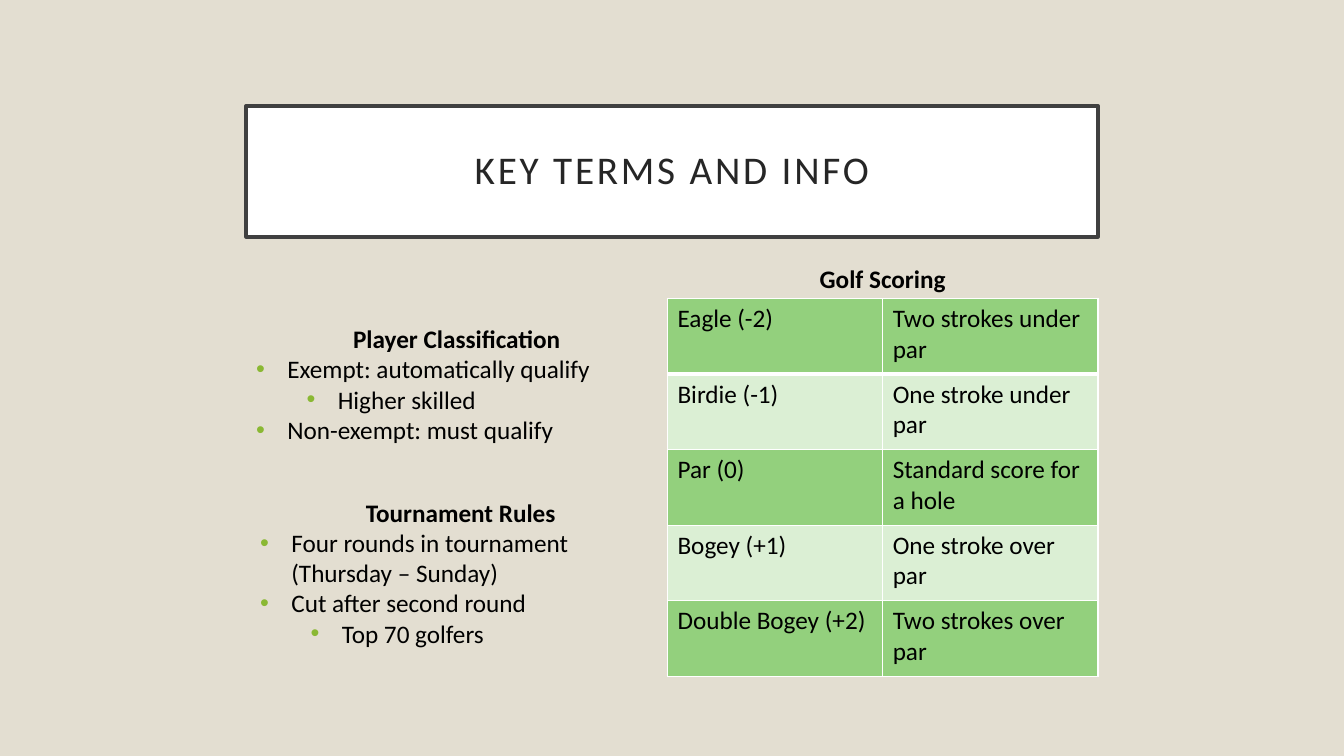
import pptx
import pptx.util
import pptx.dml.color
import pptx.enum.text
import pptx.oxml
import pptx.oxml.ns

Inches = pptx.util.Inches
Pt = pptx.util.Pt
ALIGN = pptx.enum.text.PP_ALIGN
ANCHOR = pptx.enum.text.MSO_ANCHOR
FIT = pptx.enum.text.MSO_AUTO_SIZE

BLACK, WHITE, GREEN = "000000", "FFFFFF", "8AB833"
BANDS = ("93D07D", "DBEFD4")

CLASSES = [
    (0, "Exempt: automatically qualify"),
    (1, "Higher skilled"),
    (0, "Non-exempt: must qualify"),
]
RULES = [
    (0, "Four rounds in tournament (Thursday – Sunday)"),
    (0, "Cut after second round"),
    (1, "Top 70 golfers"),
]
SCORES = [
    ("Eagle (-2)", "Two strokes under par"),
    ("Birdie (-1)", "One stroke under par"),
    ("Par (0)", "Standard score for a hole"),
    ("Bogey (+1)", "One stroke over par"),
    ("Double Bogey (+2)", "Two strokes over par"),
]


def color(code):
    return pptx.dml.color.RGBColor.from_string(code)


def paint(fill, code):
    fill.solid()
    fill.fore_color.rgb = color(code)


def style(para, size=18, code=BLACK, bold=False):
    font = para.font
    font.name, font.size, font.bold = "Calibri", Pt(size), bold
    font.color.rgb = color(code)


def element(xml):
    """Parse one a: element, adding its namespace."""
    tag, rest = xml[:xml.index(" ")], xml[xml.index(" "):]
    return pptx.oxml.parse_xml(f"{tag} {pptx.oxml.ns.nsdecls('a')}{rest}")


def place(shape, box):
    shape.left, shape.top, shape.width, shape.height = map(Inches, box)


def add_title(slide, box):
    title = slide.shapes.title
    place(title, box)
    paint(title.fill, WHITE)
    title.line.color.rgb = color("404040")
    title.line.width = Pt(2.5)
    frame = title.text_frame
    frame.text = "KEY TERMS AND INFO"
    frame.word_wrap = True
    frame.auto_size = FIT.NONE
    frame.vertical_anchor = ANCHOR.MIDDLE
    frame.margin_left = frame.margin_right = Inches(0.2)
    frame.margin_top = frame.margin_bottom = Inches(0.2)
    para = frame.paragraphs[0]
    para.alignment = ALIGN.CENTER
    para.line_spacing = 0.9
    style(para, 28, "262626")
    para.runs[0]._r.get_or_add_rPr().set("spc", "200")


def add_head(para, text):
    para.text = text
    para.alignment = ALIGN.CENTER
    style(para, bold=True)


def indent(para, left, hang):
    props = para._p.get_or_add_pPr()
    props.set("marL", str(Inches(left)))
    props.set("indent", str(Inches(-hang)))
    return props


def add_list(holder, box, head, items):
    place(holder, box)
    frame = holder.text_frame
    frame.word_wrap = True
    frame.auto_size = FIT.NONE
    first = frame.paragraphs[0]
    first.space_before = Pt(0)
    indent(first, 0, 0).append(element("<a:buNone />"))
    add_head(first, head)
    for level, text in items:
        para = frame.add_paragraph()
        para.text = text
        para.level = level
        para.space_before = Pt(0)
        props = indent(para, 0.31 + 0.5 * level, 0.31)
        props.append(element(f'<a:buClr ><a:srgbClr val="{GREEN}"/></a:buClr>'))
        props.append(element('<a:buFont typeface="Arial"/>'))
        props.append(element('<a:buChar char="•"/>'))
        style(para)


def add_edges(cell, base):
    """Draw white cell borders, with the bottom one base points wide."""
    props = cell._tc.get_or_add_tcPr()
    for side, width in zip("LRTB", (1, 1, 1, base)):
        props.append(element(
            f'<a:ln{side} w="{Pt(width)}"><a:solidFill>'
            f'<a:srgbClr val="{WHITE}"/></a:solidFill></a:ln{side}>'))


def add_scores(slide, box):
    left, top, width, height = box
    label = 0.4
    text = slide.shapes.add_textbox(*map(Inches, (left, top, width, label)))
    text.text_frame.word_wrap = True
    add_head(text.text_frame.paragraphs[0], "Golf Scoring")

    area = map(Inches, (left, top + label, width, height - label))
    table = slide.shapes.add_table(len(SCORES), 2, *area).table
    table.first_row = table.horz_banding = False
    for row, words in enumerate(SCORES):
        for col, word in enumerate(words):
            cell = table.cell(row, col)
            cell.text = word
            style(cell.text_frame.paragraphs[0])
            add_edges(cell, 1 if row else 3)
            paint(cell.fill, BANDS[row % 2])


def main():
    deck = pptx.Presentation()
    deck.slide_width, deck.slide_height = Inches(13.33), Inches(7.5)
    slide = deck.slides.add_slide(deck.slide_layouts.get_by_name("Two Content"))
    paint(slide.background.fill, "E3DED1")
    add_title(slide, (2.44, 1.05, 8.45, 1.3))
    upper, lower = slide.placeholders[1], slide.placeholders[2]
    add_list(upper, (2.44, 3.16, 4.18, 1.31), "Player Classification", CLASSES)
    add_list(lower, (2.48, 4.88, 4.18, 1.62), "Tournament Rules", RULES)
    add_scores(slide, (6.62, 2.56, 4.27, 4.15))
    deck.save("out.pptx")


if __name__ == "__main__":
    main()
